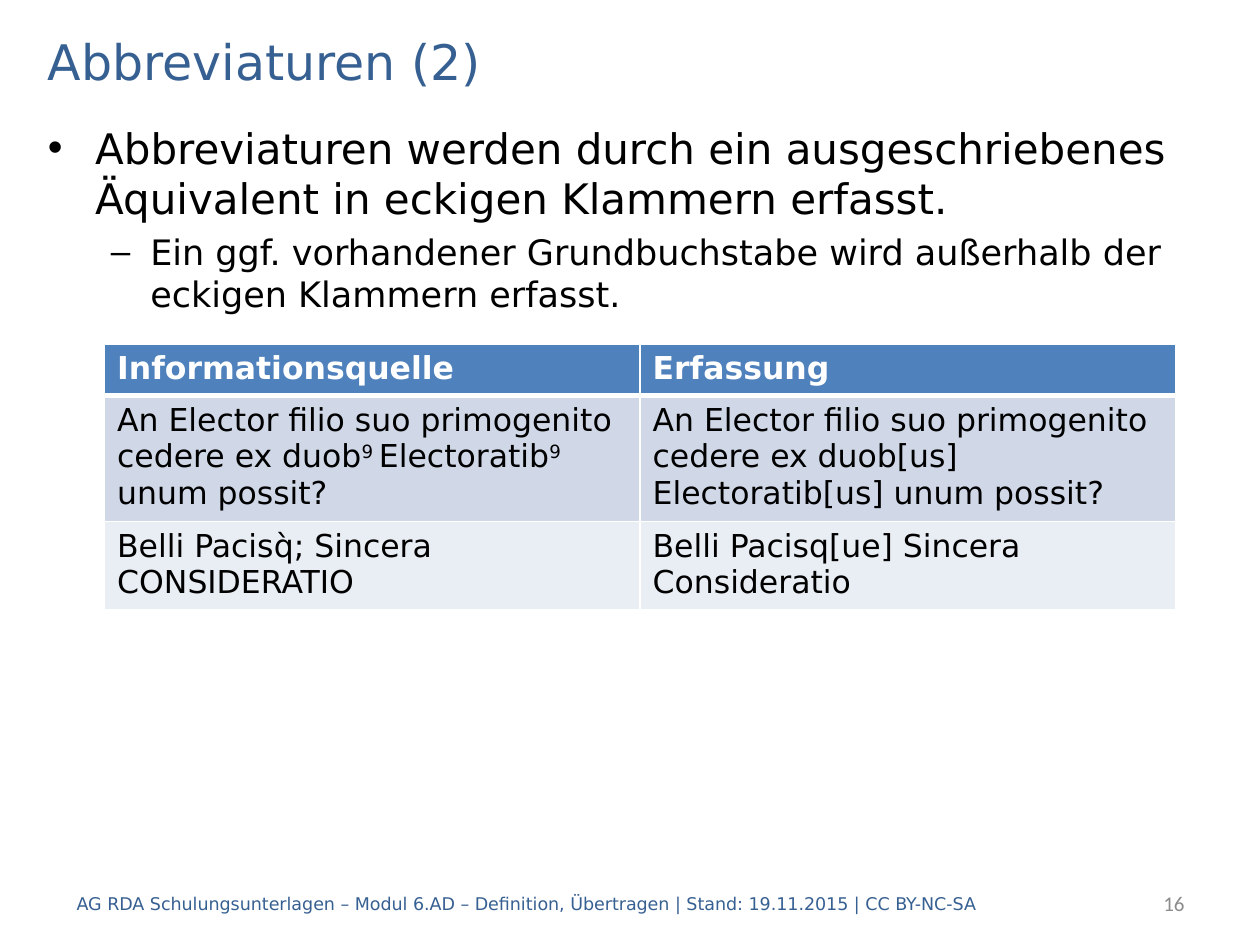
from dataclasses import dataclass

from lxml.etree import SubElement
from pptx import Presentation
from pptx.dml.color import RGBColor
from pptx.enum.text import MSO_ANCHOR, MSO_AUTO_SIZE, PP_ALIGN
from pptx.oxml.ns import qn
from pptx.util import Inches, Pt


@dataclass(frozen=True)
class Theme:
    font: str = "DejaVu Sans"
    number_font: str = "Calibri"
    accent: str = "376092"
    text: str = "000000"
    muted: str = "8C8C8C"
    white: str = "FFFFFF"
    header: str = "4F81BD"
    bands: tuple = ("D0D8E8", "E9EDF4")
    title_size: int = 28
    body_sizes: tuple = (24, 20)
    table_size: int = 18
    footer_size: int = 10
    number_size: int = 12


THEME = Theme()

BULLETS = [
    (0, "Abbreviaturen werden durch ein ausgeschriebenes Äquivalent in eckigen Klammern erfasst."),
    (1, "Ein ggf. vorhandener Grundbuchstabe wird außerhalb der eckigen Klammern erfasst."),
]
# A cell is a list of (text, superscript percent) pieces.
ROWS = [
    [[("Informationsquelle", 0)], [("Erfassung", 0)]],
    [[("An Elector filio suo primogenito cedere ex duob", 0), ("9 ", 30),
      ("Electoratib", 0), ("9 ", 30), ("unum possit?", 0)],
     [("An Elector filio suo primogenito cedere ex duob[us] Electoratib[us] unum possit?", 0)]],
    [[("Belli Pacisq̀; Sincera CONSIDERATIO", 0)],
     [("Belli Pacisq[ue] Sincera Consideratio", 0)]],
]
ROW_HEIGHTS = [0.41, 0.97, 0.68]
FOOTER = ("AG RDA Schulungsunterlagen – Modul 6.AD – Definition, Übertragen"
          " | Stand: 19.11.2015 | CC BY-NC-SA")


def add_text(p, text, *, size, color=THEME.text, font=THEME.font,
             bold=False, align=PP_ALIGN.LEFT, raised=0):
    p.alignment = align
    r = p.add_run()
    r.text = text
    r.font.size = Pt(size)
    r.font.name = font
    r.font.bold = bold
    r.font.color.rgb = RGBColor.from_string(color)
    if raised:
        r.font._element.set("baseline", str(raised * 1000))


def place(sp, box):
    sp.left, sp.top, sp.width, sp.height = (Inches(v) for v in box)


def fill_title(s, box, text):
    sp = s.shapes.title
    place(sp, box)
    tf = sp.text_frame
    tf.auto_size = MSO_AUTO_SIZE.NONE
    tf.vertical_anchor = MSO_ANCHOR.MIDDLE
    add_text(tf.paragraphs[0], text, size=THEME.title_size, color=THEME.accent)


def fill_body(s, box, items):
    sp = s.placeholders[1]
    place(sp, box)
    tf = sp.text_frame
    tf.auto_size = MSO_AUTO_SIZE.NONE
    for i, (level, text) in enumerate(items):
        p = tf.add_paragraph() if i else tf.paragraphs[0]
        p.level = level
        add_text(p, text, size=THEME.body_sizes[level])


def set_borders(cell, **widths):
    """Draw white cell borders; keys are the sides L, R, T and B, in points."""
    tcPr = cell._tc.get_or_add_tcPr()
    for side, width in widths.items():
        ln = SubElement(tcPr, qn(f"a:ln{side}"), w=str(Pt(width)))
        fill = SubElement(ln, qn("a:solidFill"))
        SubElement(fill, qn("a:srgbClr"), val=THEME.white)


def add_comparison_table(s, box, rows):
    left, top, width, height = (Inches(v) for v in box)
    table = s.shapes.add_table(len(rows), len(rows[0]), left, top, width, height).table
    for i, row in enumerate(rows):
        table.rows[i].height = Inches(ROW_HEIGHTS[i])
        is_header = i == 0
        fill = THEME.header if is_header else THEME.bands[(i - 1) % 2]
        for j, pieces in enumerate(row):
            cell = table.cell(i, j)
            set_borders(cell, L=1, R=1, T=3 if i == 1 else 1, B=3 if is_header else 1)
            cell.fill.solid()
            cell.fill.fore_color.rgb = RGBColor.from_string(fill)
            for text, raised in pieces:
                add_text(cell.text_frame.paragraphs[0], text, size=THEME.table_size,
                         color=THEME.white if is_header else THEME.text,
                         bold=is_header, raised=raised)


def add_label(s, box, text, **fmt):
    sp = s.shapes.add_textbox(*(Inches(v) for v in box))
    tf = sp.text_frame
    tf.word_wrap = True
    tf.vertical_anchor = MSO_ANCHOR.MIDDLE
    add_text(tf.paragraphs[0], text, **fmt)


def add_footer(s, box, text, number):
    left, top, width, height = box
    number_width = 1.59
    add_label(s, (left, top, 8.27, height), text,
              size=THEME.footer_size, color=THEME.accent)
    add_label(s, (left + width - number_width, top, number_width, height), number,
              size=THEME.number_size, color=THEME.muted,
              font=THEME.number_font, align=PP_ALIGN.RIGHT)


def main():
    prs = Presentation()
    prs.slide_width, prs.slide_height = Inches(10), Inches(7.5)
    s = prs.slides.add_slide(prs.slide_layouts[1])
    fill_title(s, (0.28, 0.2, 9.45, 0.56), "Abbreviaturen (2)")
    fill_body(s, (0.28, 0.92, 9.45, 5.98), BULLETS)
    add_footer(s, (0.51, 6.97, 8.99, 0.4), FOOTER, "16")
    add_comparison_table(s, (0.83, 2.73, 8.5, sum(ROW_HEIGHTS)), ROWS)
    prs.save("out.pptx")


if __name__ == "__main__":
    main()
